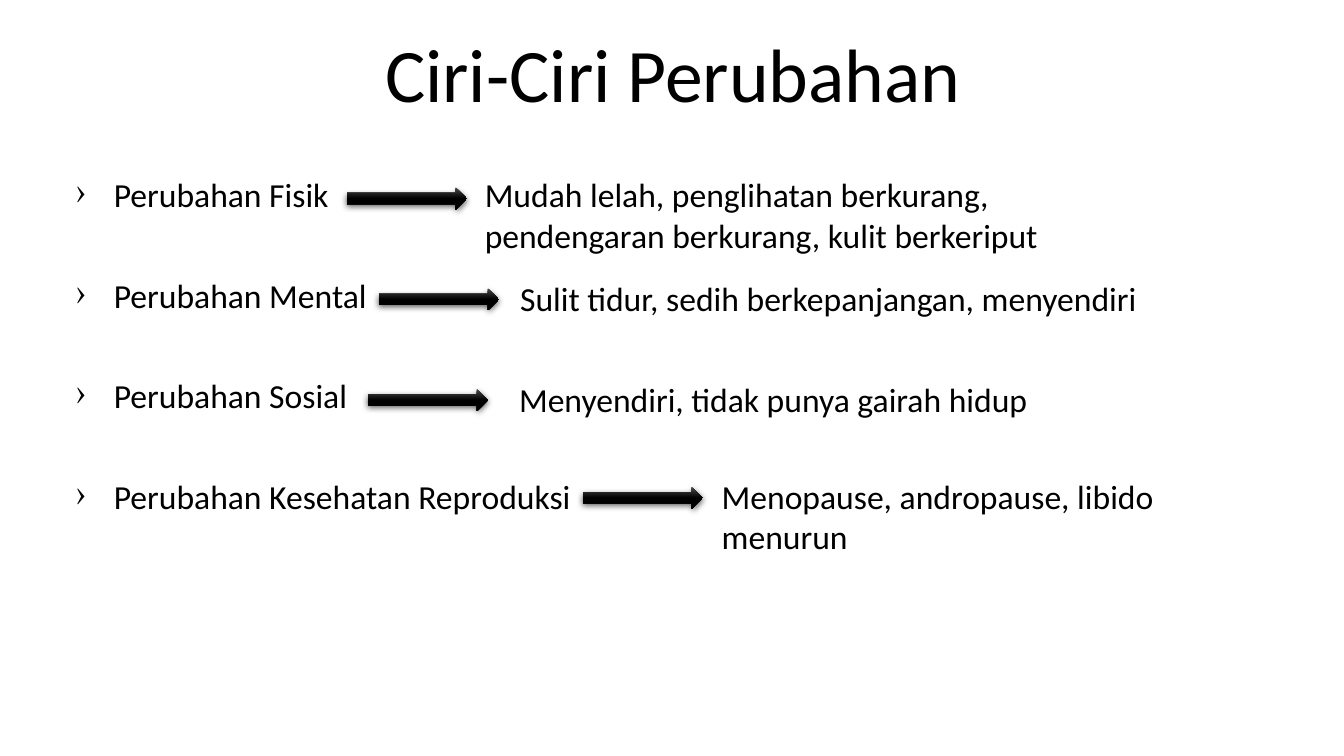
"""Build the slide on the signs of change in old age."""
from dataclasses import dataclass

from lxml.etree import SubElement
from pptx import Presentation
from pptx.dml.color import RGBColor
from pptx.enum.shapes import MSO_SHAPE
from pptx.enum.text import MSO_ANCHOR, MSO_AUTO_SIZE, PP_ALIGN
from pptx.oxml.ns import qn
from pptx.shapes.autoshape import Shape
from pptx.slide import Slide
from pptx.text.text import TextFrame, _Paragraph
from pptx.util import Inches, Pt


@dataclass(frozen=True)
class Theme:
    """Colours, font and type sizes."""
    font: str = "Calibri"
    text: RGBColor = RGBColor(0, 0, 0)
    arrow_top: RGBColor = RGBColor(0x4B, 0x4B, 0x4B)
    arrow_base: RGBColor = RGBColor(0, 0, 0)
    shadow: str = "000000"
    title_size: int = 54
    body_size: int = 24


@dataclass(frozen=True)
class Box:
    """Place and size in inches."""
    left: float
    top: float
    width: float
    height: float

    def lengths(self) -> tuple[Inches, Inches, Inches, Inches]:
        """Return the four values as lengths."""
        return Inches(self.left), Inches(self.top), Inches(self.width), Inches(self.height)


@dataclass(frozen=True)
class Change:
    """A kind of change, its arrow position and its signs."""
    label: str
    arrow_left: float
    arrow_top: float
    signs: str
    box: Box


THEME = Theme()
TITLE_BOX = Box(0.83, 0.28, 11.69, 0.95)
LIST_BOX = Box(0.65, 1.72, 12.11, 3.97)
ARROW_WIDTH, ARROW_HEIGHT = 1.19, 0.22
CHANGES = [
    Change("Perubahan Fisik", 3.44, 1.86,
           "Mudah lelah, penglihatan berkurang, pendengaran berkurang, kulit berkeriput",
           Box(4.71, 1.68, 5.83, 1.21)),
    Change("Perubahan Mental", 3.76, 2.86,
           "Sulit tidur, sedih berkepanjangan, menyendiri", Box(5.06, 2.71, 6.58, 0.5)),
    Change("Perubahan Sosial", 3.65, 3.86,
           "Menyendiri, tidak punya gairah hidup", Box(5.05, 3.71, 6.2, 0.5)),
    Change("Perubahan Kesehatan Reproduksi", 5.78, 4.83,
           "Menopause, andropause, libido menurun", Box(7.06, 4.67, 4.69, 0.91)),
]


def add_frame(s: Slide, box: Box) -> TextFrame:
    """Add a wrapping text box and return its frame."""
    tf = s.shapes.add_textbox(*box.lengths()).text_frame
    tf.word_wrap = True
    return tf


def write(p: _Paragraph, text: str, size: int) -> None:
    """Fill a paragraph and set its font."""
    p.text = text
    p.font.name = THEME.font
    p.font.size = Pt(size)
    p.font.color.rgb = THEME.text


def add_title(s: Slide, text: str) -> None:
    """Add the centred title."""
    tf = add_frame(s, TITLE_BOX)
    tf.vertical_anchor = MSO_ANCHOR.BOTTOM
    p = tf.paragraphs[0]
    write(p, text, THEME.title_size)
    p.alignment = PP_ALIGN.CENTER
    p.line_spacing = 0.9


def set_bullet(p: _Paragraph, char: str, indent: float) -> None:
    """Give a paragraph a bullet with a hanging indent."""
    pPr = p._p.get_or_add_pPr()
    pPr.set("marL", str(Inches(indent)))
    pPr.set("indent", str(-Inches(indent)))
    bullet = pPr.makeelement(qn("a:buChar"), {"char": char})
    pPr.insert_element_before(bullet, "a:tabLst", "a:defRPr", "a:extLst")


def add_list(s: Slide, labels: list[str]) -> None:
    """Add the bulleted list of changes."""
    tf = add_frame(s, LIST_BOX)
    for i, label in enumerate(labels):
        p = tf.add_paragraph() if i else tf.paragraphs[0]
        write(p, label, THEME.body_size)
        p.line_spacing = 0.9
        p.space_after = Pt(46)
        set_bullet(p, "›", 0.38)


def set_shadow(sp: Shape) -> None:
    """Give a shape a soft shadow straight below it."""
    sp.shadow.inherit = False
    effects = sp._element.spPr.find(qn("a:effectLst"))
    outer = SubElement(effects, qn("a:outerShdw"), blurRad=str(Pt(4.5)),
                       dist=str(Pt(1.5)), dir="5400000", rotWithShape="0")
    color = SubElement(outer, qn("a:srgbClr"), val=THEME.shadow)
    SubElement(color, qn("a:alpha"), val="63000")


def add_arrow(s: Slide, left: float, top: float) -> None:
    """Add a shaded arrow pointing right."""
    box = Box(left, top, ARROW_WIDTH, ARROW_HEIGHT)
    sp = s.shapes.add_shape(MSO_SHAPE.RIGHT_ARROW, *box.lengths())
    sp.line.fill.background()
    sp.fill.gradient()
    sp.fill.gradient_angle = 270
    first, last = sp.fill.gradient_stops
    first.color.rgb = THEME.arrow_top
    last.color.rgb = THEME.arrow_base
    last.position = 0.5
    set_shadow(sp)


def add_signs(s: Slide, change: Change) -> None:
    """Add the signs of one change."""
    tf = add_frame(s, change.box)
    tf.auto_size = MSO_AUTO_SIZE.SHAPE_TO_FIT_TEXT
    write(tf.paragraphs[0], change.signs, THEME.body_size)


def main() -> None:
    """Build and save the slide."""
    prs = Presentation()
    prs.slide_width, prs.slide_height = Inches(13.33), Inches(7.5)
    s = prs.slides.add_slide(prs.slide_layouts[6])
    add_title(s, "Ciri-Ciri Perubahan")
    add_list(s, [change.label for change in CHANGES])
    for change in CHANGES:
        add_arrow(s, change.arrow_left, change.arrow_top)
        add_signs(s, change)
    prs.save("out.pptx")


if __name__ == "__main__":
    main()
